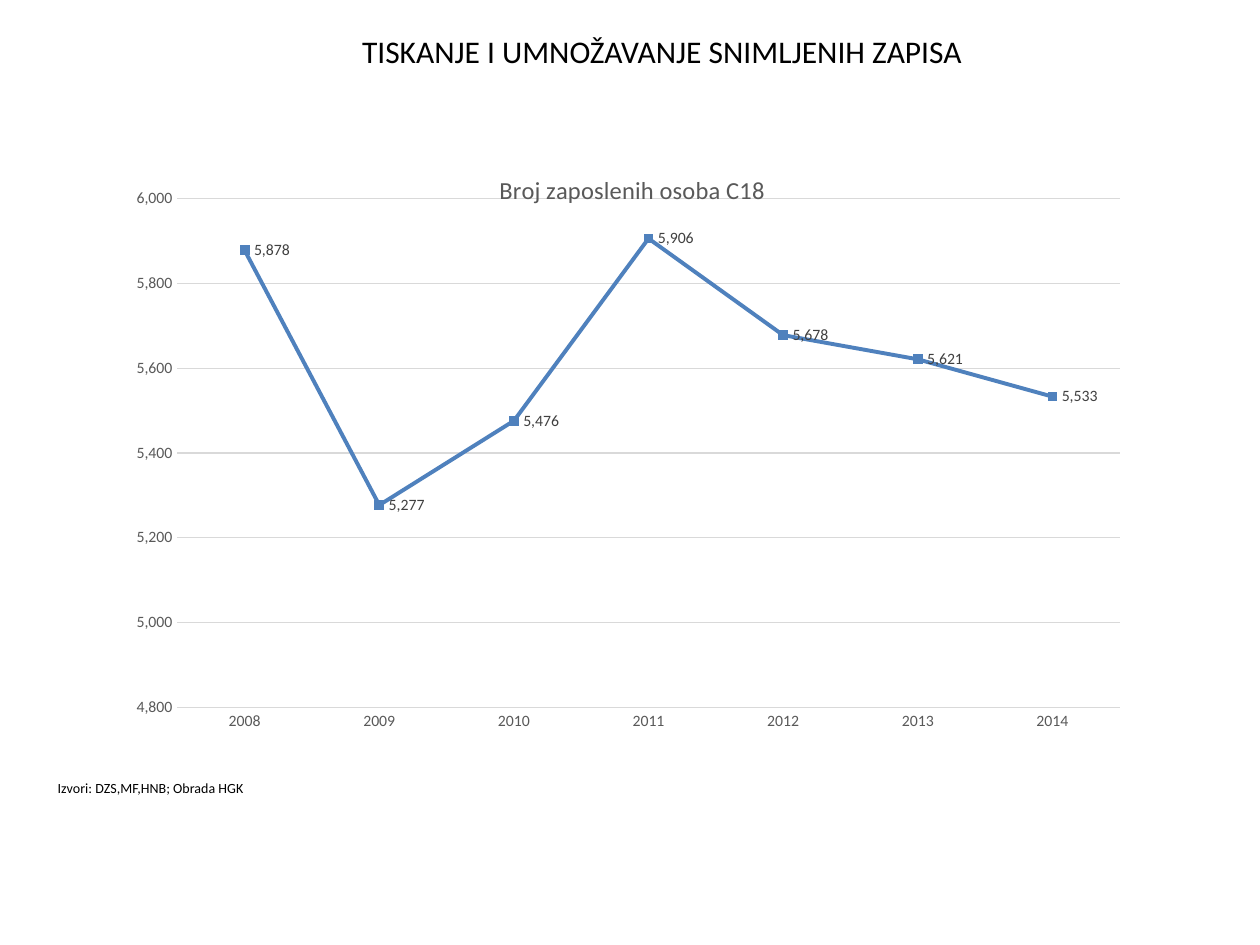
from dataclasses import dataclass

from lxml.etree import SubElement
from pptx import Presentation
from pptx.chart.data import CategoryChartData
from pptx.dml.color import RGBColor as RGB
from pptx.enum.chart import XL_CHART_TYPE as ChartType
from pptx.enum.chart import XL_LABEL_POSITION as LabelPos
from pptx.enum.chart import XL_TICK_MARK as Tick
from pptx.enum.text import MSO_ANCHOR as Anchor
from pptx.enum.text import PP_ALIGN as Align
from pptx.oxml.ns import qn
from pptx.util import Inches, Pt


@dataclass(frozen=True)
class Theme:
    font: str = "Calibri"
    ink: str = "000000"
    muted: str = "595959"
    label: str = "404040"
    grid: str = "D9D9D9"
    line: str = "4F81BD"
    title: int = 18
    heading: int = 14
    axis: int = 9
    note: int = 8


T = Theme()
EMPLOYEES = {
    "2008": 5878, "2009": 5277, "2010": 5476, "2011": 5906,
    "2012": 5678, "2013": 5621, "2014": 5533,
}


def style(font, size, color):
    font.name = T.font
    font.size = Pt(size)
    font.bold = False
    font.color.rgb = RGB.from_string(color)


def stroke(line, color, width):
    line.color.rgb = RGB.from_string(color)
    line.width = Pt(width)


def write(tf, text, size=T.note, color=T.ink, align=Align.LEFT, anchor=Anchor.TOP):
    tf.word_wrap = True
    tf.vertical_anchor = anchor
    p = tf.paragraphs[0]
    p.alignment = align
    r = p.add_run()
    r.text = text
    style(r.font, size, color)


def place_layout(parent, index, **values):
    for old in parent.findall(qn("c:layout")):
        parent.remove(old)
    layout = SubElement(parent, qn("c:layout"))
    parent.insert(index, layout)
    manual = SubElement(layout, qn("c:manualLayout"))
    for tag, value in values.items():
        SubElement(manual, qn(f"c:{tag}")).set("val", str(value))


def add_title(s, box):
    sp = s.shapes.title
    sp.left, sp.top, sp.width, sp.height = box
    write(sp.text_frame, "TISKANJE I UMNOŽAVANJE SNIMLJENIH ZAPISA",
          size=T.title, align=Align.CENTER, anchor=Anchor.MIDDLE)


def add_note(s, box):
    sp = s.shapes.add_textbox(*box)
    write(sp.text_frame, "Izvori: DZS,MF,HNB; Obrada HGK")


def format_axes(chart):
    cat, val = chart.category_axis, chart.value_axis
    for axis in (cat, val):
        axis.major_tick_mark = axis.minor_tick_mark = Tick.NONE
        style(axis.tick_labels.font, T.axis, T.muted)
    stroke(cat.format.line, T.grid, 0.75)
    val.format.line.fill.background()
    val.minimum_scale, val.maximum_scale, val.major_unit = 4800, 6000, 200
    val.tick_labels.number_format = "#,##0"
    val.tick_labels.number_format_is_linked = False
    stroke(val.major_gridlines.format.line, T.grid, 0.75)


def format_series(plot):
    plot.vary_by_categories = False
    series = plot.series[0]
    series.smooth = False
    series.marker.style = None
    stroke(series.format.line, T.line, 2.25)
    labels = series.data_labels
    labels.show_value = True
    labels.position = LabelPos.RIGHT
    labels.number_format = "#,##0"
    labels.number_format_is_linked = False
    style(labels.font, T.axis, T.label)


def add_employee_chart(s, box):
    data = CategoryChartData(number_format="#,##0")
    data.categories = list(EMPLOYEES)
    data.add_series("Series 1", list(EMPLOYEES.values()))
    chart = s.shapes.add_chart(ChartType.LINE, *box, data).chart
    style(chart.font, 10, T.ink)
    chart.has_legend = False
    chart.has_title = True
    write(chart.chart_title.text_frame, "Broj zaposlenih osoba C18",
          size=T.heading, color=T.muted, align=Align.CENTER)
    format_axes(chart)
    format_series(chart.plots[0])
    area = chart.element.find(qn("c:chart"))
    place_layout(area.find(qn("c:title")), 1, xMode="edge", yMode="edge", x=0.37, y=0.04)
    place_layout(area.find(qn("c:plotArea")), 0, layoutTarget="inner",
                 xMode="edge", yMode="edge", x=0.06, y=0.09, w=0.92, h=0.85)


def main():
    prs = Presentation()
    prs.slide_width, prs.slide_height = Inches(10), Inches(7.5)

    def share(*fractions):
        sides = (prs.slide_width, prs.slide_height) * 2
        return [round(side * f / 100) for side, f in zip(sides, fractions)]

    s = prs.slides.add_slide(prs.slide_layouts[5])
    add_employee_chart(s, share(9.2, 15.33, 81.3, 63.33))
    add_note(s, share(3.6, 81.87, 61.3, 3.2))
    add_title(s, share(14.3, 2.67, 76.5, 5.33))
    prs.save("out.pptx")


if __name__ == "__main__":
    main()
